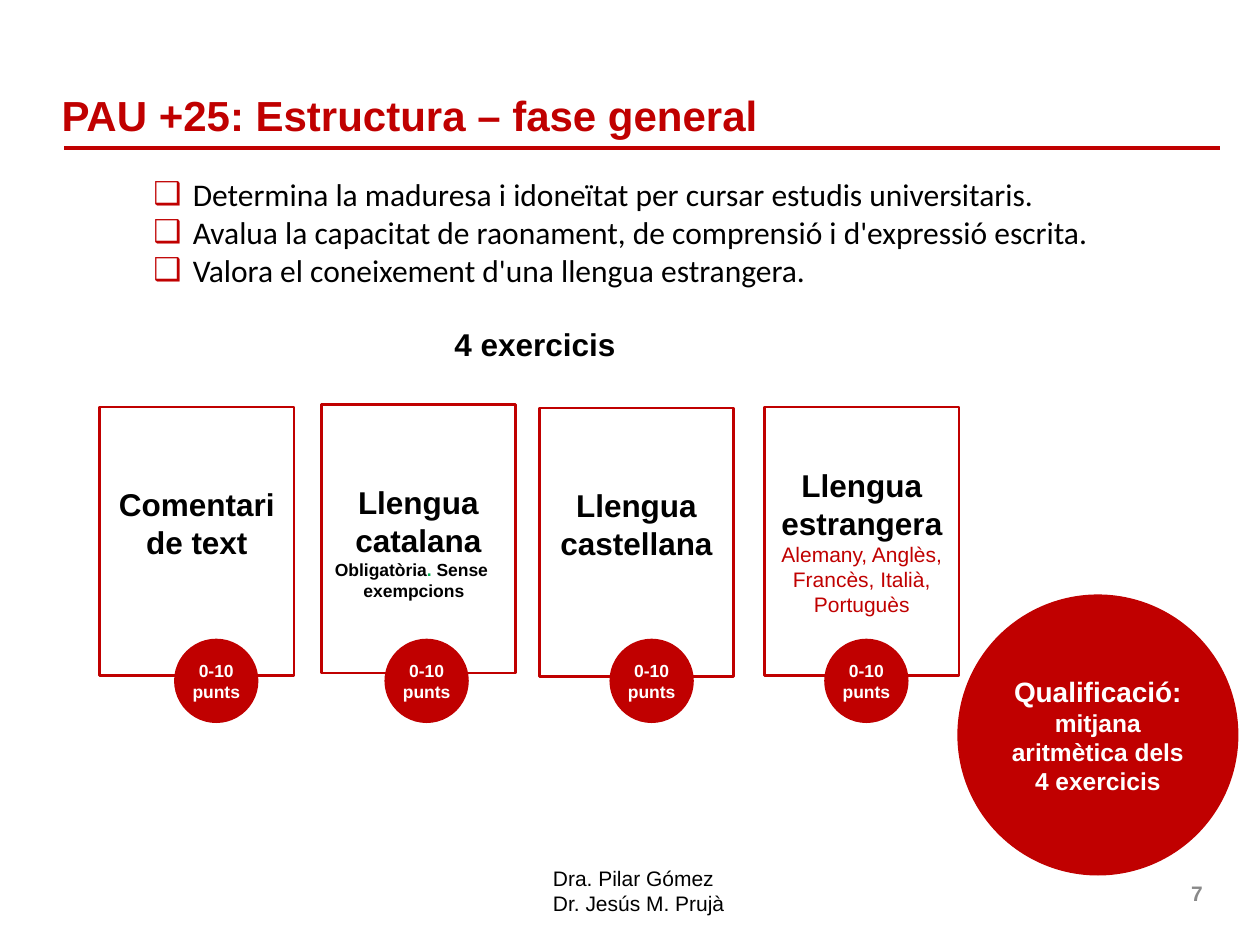
from dataclasses import dataclass

import pptx
import pptx.dml.color
import pptx.enum.shapes
import pptx.enum.text
import pptx.oxml.ns
import pptx.util
from lxml import etree

Pt = pptx.util.Pt
Align = pptx.enum.text.PP_ALIGN
Anchor = pptx.enum.text.MSO_ANCHOR
Shape = pptx.enum.shapes.MSO_SHAPE


@dataclass(frozen=True)
class Theme:
    red: str = "C00000"
    black: str = "000000"
    white: str = "FFFFFF"
    grey: str = "898989"
    green: str = "00B050"
    heading_font: str = "Arial"
    body_font: str = "Calibri"
    title: int = 24
    body: int = 18
    result: int = 16
    result_detail: int = 14
    detail: int = 12
    small: int = 10


THEME = Theme()
BLANK_LINE = 20.7
BULLET_INDENT = 22.5

CARD_SIZE = (111, 153.5)
BADGE_TOP, BADGE_SIZE = 365, 48.2
# Left, top and lines of each card, then the left of its badge
CARDS = [
    (57, 232.6, ["Comentari", "de text"], 99.5),
    (183.6, 231.2, ["Llengua catalana"], 219.7),
    (308.2, 233.2, ["Llengua castellana"], 348.3),
    (437, 232.6, ["Llengua estrangera", "Alemany, Anglès, Francès, Italià, Portuguès"], 471),
]
AIMS = [
    "Determina la maduresa i idoneïtat per cursar estudis universitaris.",
    "Avalua la capacitat de raonament, de comprensió i d'expressió escrita.",
    "Valora el coneixement d'una llengua estrangera.",
]


def rgb(color):
    return pptx.dml.color.RGBColor.from_string(color)


def format_font(font, size, color, bold=True, name=THEME.heading_font):
    font.size = Pt(size)
    font.bold = bold
    font.name = name
    font.color.rgb = rgb(color)


def write(shape, lines, size, color, bold=True, name=THEME.heading_font,
          align=Align.CENTER, anchor=Anchor.MIDDLE):
    """Put one paragraph per line in the shape, all in one style."""
    frame = shape.text_frame
    frame.text = "\n".join(lines)
    frame.vertical_anchor = anchor
    for paragraph in frame.paragraphs:
        paragraph.alignment = align
        for run in paragraph.runs:
            format_font(run.font, size, color, bold, name)
    return frame


def add_text(slide, box, lines, size, color, wrap=True, anchor=Anchor.TOP, **style):
    text_box = slide.shapes.add_textbox(*map(Pt, box))
    frame = write(text_box, lines, size, color, anchor=anchor, **style)
    frame.word_wrap = wrap
    return frame


def add_filled_shape(slide, kind, box, fill, line=None):
    shape = slide.shapes.add_shape(kind, *map(Pt, box))
    shape.shadow.inherit = False
    shape.fill.solid()
    shape.fill.fore_color.rgb = rgb(fill)
    if line:
        shape.line.color.rgb = rgb(line)
        shape.line.width = Pt(1.5)
    else:
        shape.line.fill.background()
    return shape


def add_title(slide, text):
    title = slide.shapes.title
    title.left, title.top, title.width, title.height = map(Pt, (28, 45.5, 674.6, 39.6))
    frame = write(title, [text], THEME.title, THEME.red, align=Align.LEFT)
    frame.auto_size = pptx.enum.text.MSO_AUTO_SIZE.NONE


def add_rule(slide):
    rule = slide.shapes.add_connector(
        pptx.enum.shapes.MSO_CONNECTOR.STRAIGHT, Pt(36.7), Pt(84.4), Pt(697), Pt(84.4))
    rule.line.color.rgb = rgb(THEME.red)
    rule.line.width = Pt(2.25)
    etree.SubElement(rule._element.spPr, pptx.oxml.ns.qn("a:effectLst"))


def add_bullet(paragraph):
    qn = pptx.oxml.ns.qn
    properties = paragraph._p.get_or_add_pPr()
    properties.set("marL", str(Pt(BULLET_INDENT)))
    properties.set("indent", str(-Pt(BULLET_INDENT)))
    color = etree.SubElement(properties, qn("a:buClr"))
    etree.SubElement(color, qn("a:srgbClr"), val=THEME.red)
    etree.SubElement(properties, qn("a:buFont"), typeface=THEME.heading_font)
    etree.SubElement(properties, qn("a:buChar"), char="❑")


def add_aims(slide):
    frame = add_text(slide, (80.6, 96.5, 580.3, 72.7), AIMS, THEME.body, THEME.black,
                     bold=False, name=THEME.body_font, align=Align.LEFT)
    for paragraph in frame.paragraphs:
        add_bullet(paragraph)


def add_card(slide, left, top, lines):
    card = add_filled_shape(slide, Shape.RECTANGLE, (left, top, *CARD_SIZE),
                            THEME.white, THEME.red)
    frame = write(card, lines, THEME.body, THEME.black)
    if lines[-1].startswith("Alemany"):
        format_font(frame.paragraphs[-1].runs[0].font, THEME.detail, THEME.red, bold=False)
    else:
        frame.margin_bottom = Pt(3.6 + BLANK_LINE)


def add_badge(slide, left):
    badge = add_filled_shape(slide, Shape.OVAL, (left, BADGE_TOP, BADGE_SIZE, BADGE_SIZE),
                             THEME.red)
    frame = write(badge, ["0-10", "punts"], THEME.small, THEME.white)
    frame.margin_left = frame.margin_right = frame.margin_top = frame.margin_bottom = 0


def add_result(slide):
    circle = add_filled_shape(slide, Shape.OVAL, (547.1, 339.7, 160.6, 160.6), THEME.red)
    frame = write(circle, ["Qualificació:", "mitjana aritmètica dels 4 exercicis"],
                  THEME.result, THEME.white)
    frame.paragraphs[1].runs[0].font.size = Pt(THEME.result_detail)


def add_obligation(slide):
    frame = add_text(slide, (183.6, 316.1, 105.8, 31.7), ["", "exempcions"],
                     THEME.small, THEME.black, wrap=False)
    for text, color in (("Obligatòria", THEME.black), (". ", THEME.green),
                        ("Sense ", THEME.black)):
        run = frame.paragraphs[0].add_run()
        run.text = text
        format_font(run.font, THEME.small, color)


def main():
    presentation = pptx.Presentation()
    presentation.slide_width, presentation.slide_height = Pt(720), Pt(540)
    slide = presentation.slides.add_slide(presentation.slide_layouts[5])

    add_rule(slide)
    add_text(slide, (308.9, 491, 113, 36.7), ["Dra. Pilar Gómez", "Dr. Jesús M. Prujà"],
             THEME.detail, THEME.black, bold=False, align=Align.LEFT)
    add_title(slide, "PAU +25: Estructura – fase general")
    add_text(slide, (526.3, 496.1, 168, 28.8), ["7"], THEME.detail, THEME.grey,
             align=Align.RIGHT, anchor=Anchor.MIDDLE)
    for left, top, lines, _ in CARDS:
        add_card(slide, left, top, lines)
    add_text(slide, (252, 182.2, 107.3, 28.8), ["4 exercicis"], THEME.body, THEME.black,
             wrap=False)
    add_result(slide)
    for *_, badge_left in CARDS:
        add_badge(slide, badge_left)
    add_obligation(slide)
    add_aims(slide)

    presentation.save("out.pptx")


if __name__ == "__main__":
    main()
